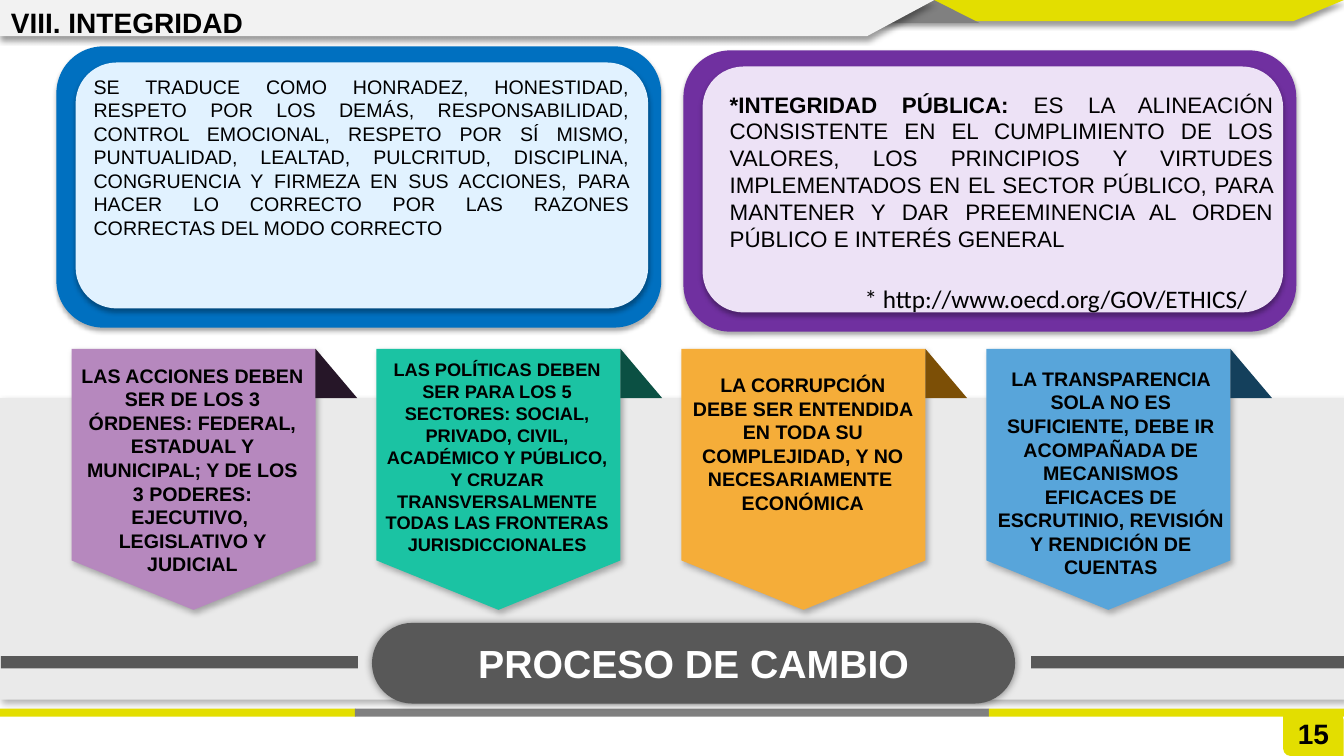
from dataclasses import dataclass
from typing import NamedTuple

from lxml.etree import SubElement
from pptx import Presentation
from pptx.dml.color import RGBColor
from pptx.enum.shapes import MSO_SHAPE
from pptx.enum.text import MSO_ANCHOR, MSO_AUTO_SIZE, PP_ALIGN
from pptx.oxml.ns import qn
from pptx.util import Emu, Inches, Pt

CELL = Inches(0.1)
COLUMNS, ROWS = 133.33, 75

COLORS = {
    "white": "FFFFFF", "black": "000000", "yellow": "E3DE00", "gray": "808080",
    "header": "F2F2F2", "band": "EAEAEA", "charcoal": "585858",
    "blue": "0070C0", "pale_blue": "E1F2FF", "purple": "7030A0", "pale_purple": "EDE2F6",
    "mauve": "B688BE", "dark_mauve": "261628", "teal": "1BC3A3", "dark_teal": "0B5043",
    "orange": "F5AD39", "dark_orange": "7C4F06", "sky": "58A5DA", "dark_sky": "14405C",
}


class Area(NamedTuple):
    col: float
    row: float
    cols: float
    rows: float


class Shadow(NamedTuple):
    opacity: int
    blur: float
    distance: float
    angle: int


@dataclass
class Panel:
    area: Area
    border: str
    fill: str


@dataclass
class Ribbon:
    message: str
    fill: str
    fold: str
    text_area: Area
    size: int = 14


HEADER_SHADOW = Shadow(40, 4, 3, 90)
RIBBON_SHADOW = Shadow(30, 4.5, 2.6, 53)
PANEL_SHADOW = Shadow(32, 3.5, 2.2, 90)
BUTTON_SHADOW = Shadow(40, 5, 0, 0)

RIBBON_LEFT, RIBBON_TOP, RIBBON_STEP = 7.1, 34.6, 30.25
RIBBON_COLS, RIBBON_ROWS, POINT_ROWS = 24.2, 25.9, 4.9
FOLD_COLS, FOLD_ROWS = 4.15, 4.9

PANELS = [
    Panel(Area(67.8, 5, 60.8, 27.9), "purple", "pale_purple"),
    Panel(Area(5.6, 4.6, 60, 27.9), "blue", "pale_blue"),
]

RIBBONS = [
    Ribbon("LAS ACCIONES DEBEN SER DE LOS 3 ÓRDENES: FEDERAL, ESTADUAL Y MUNICIPAL; "
           "Y DE LOS 3 PODERES: EJECUTIVO,  LEGISLATIVO Y JUDICIAL",
           "mauve", "dark_mauve", Area(7.1, 35.6, 24, 22.2)),
    Ribbon("LAS POLÍTICAS DEBEN SER PARA LOS 5 SECTORES: SOCIAL, PRIVADO, CIVIL, ACADÉMICO "
           "Y PÚBLICO, Y CRUZAR TRANSVERSALMENTE TODAS LAS FRONTERAS JURISDICCIONALES",
           "teal", "dark_teal", Area(37.2, 35.1, 24.2, 20.7), 13),
    Ribbon("LA CORRUPCIÓN DEBE SER ENTENDIDA EN TODA SU COMPLEJIDAD, "
           "Y NO NECESARIAMENTE  ECONÓMICA",
           "orange", "dark_orange", Area(67.6, 36.5, 24.1, 15.1)),
    Ribbon("LA TRANSPARENCIA SOLA NO ES SUFICIENTE, DEBE IR ACOMPAÑADA DE MECANISMOS "
           "EFICACES DE ESCRUTINIO, REVISIÓN Y RENDICIÓN DE CUENTAS",
           "sky", "dark_sky", Area(97.6, 35.9, 25.2, 22.2)),
]

INTEGRITY = ("SE TRADUCE COMO HONRADEZ, HONESTIDAD, RESPETO POR LOS DEMÁS, RESPONSABILIDAD, "
             "CONTROL EMOCIONAL, RESPETO POR SÍ MISMO, PUNTUALIDAD, LEALTAD, PULCRITUD, "
             "DISCIPLINA, CONGRUENCIA Y FIRMEZA EN SUS ACCIONES, PARA HACER LO CORRECTO "
             "POR LAS RAZONES CORRECTAS DEL MODO CORRECTO")
PUBLIC_INTEGRITY = (" ES LA ALINEACIÓN CONSISTENTE EN EL CUMPLIMIENTO DE LOS VALORES, LOS "
                    "PRINCIPIOS Y VIRTUDES IMPLEMENTADOS EN EL SECTOR PÚBLICO, PARA MANTENER "
                    "Y DAR PREEMINENCIA AL ORDEN PÚBLICO E INTERÉS GENERAL ")


def cells(count: float) -> Emu:
    return Emu(round(count * CELL))


def paint(shape, fill: str, shadow: Shadow | None = None) -> None:
    shape.fill.solid()
    shape.fill.fore_color.rgb = RGBColor.from_string(COLORS[fill])
    shape.line.fill.background()
    shape.shadow.inherit = False
    if shadow:
        effects = shape._element.spPr.find(qn("a:effectLst"))
        outer = SubElement(effects, qn("a:outerShdw"), blurRad=str(Pt(shadow.blur)),
                           dist=str(Pt(shadow.distance)), dir=str(shadow.angle * 60000),
                           algn="ctr", rotWithShape="0")
        tint = SubElement(outer, qn("a:srgbClr"), val=COLORS["black"])
        SubElement(tint, qn("a:alpha"), val=str(shadow.opacity * 1000))


def add_block(slide, area: Area, fill: str, kind=MSO_SHAPE.RECTANGLE,
              shadow: Shadow | None = None, corners: tuple[float, ...] = ()):
    block = slide.shapes.add_shape(kind, *map(cells, area))
    for index, corner in enumerate(corners):
        block.adjustments[index] = corner
    paint(block, fill, shadow)
    return block


def add_outline(slide, points: list[tuple[float, float]], fill: str,
                shadow: Shadow | None = None) -> None:
    start, *rest = [(cells(col), cells(row)) for col, row in points]
    builder = slide.shapes.build_freeform(*start)
    builder.add_line_segments(rest, close=True)
    paint(builder.convert_to_shape(), fill, shadow)


def write(frame, text: str, *, size: int, bold: bool = False, lead: str = "",
          font: str = "Arial", color: str = "black", align=PP_ALIGN.LEFT,
          anchor=MSO_ANCHOR.TOP) -> None:
    frame.word_wrap = True
    frame.auto_size = MSO_AUTO_SIZE.SHAPE_TO_FIT_TEXT
    frame.vertical_anchor = anchor
    paragraph = frame.paragraphs[0]
    paragraph.alignment = align
    for part, heavy in ((lead, True), (text, bold)):
        if part:
            run = paragraph.add_run()
            run.text = part
            run.font.name = font
            run.font.size = Pt(size)
            run.font.bold = heavy
            run.font.color.rgb = RGBColor.from_string(COLORS[color])


def add_text(slide, area: Area, text: str, **style) -> None:
    write(slide.shapes.add_textbox(*map(cells, area)).text_frame, text, **style)


def draw_frame(slide) -> None:
    add_outline(slide, [(63, 0), (COLUMNS, 0), (128.3, 2.1), (63, 2.1)], "yellow", HEADER_SHADOW)
    add_block(slide, Area(88.1, 0, 9.1, 2.3), "gray", MSO_SHAPE.ISOSCELES_TRIANGLE)
    add_outline(slide, [(0, 0), (92.7, 0), (86, 3.6), (0, 3.6)], "header", HEADER_SHADOW)
    add_block(slide, Area(127.3, 70.7, 6, 4.3), "yellow", MSO_SHAPE.ROUND_2_DIAG_RECTANGLE,
              corners=(0, 0.17))
    for col, cols, fill in ((0, 35.3, "yellow"), (35.2, 62.9, "gray"), (98.1, 35.23, "yellow")):
        add_block(slide, Area(col, 70.3, cols, 0.8), fill)
    add_text(slide, Area(127.3, 70.6, 6, 4.4), "15", size=20, bold=True, align=PP_ALIGN.CENTER)
    add_text(slide, Area(0.1, 0, 101.3, 4.4), "VIII. INTEGRIDAD", size=20, bold=True,
             anchor=MSO_ANCHOR.MIDDLE)


def draw_panel(slide, panel: Panel) -> None:
    col, row, cols, rows = panel.area
    inner = Area(col + 1.9, row + 1.6, cols - 3.2, rows - 3.5)
    for area, fill in ((panel.area, panel.border), (inner, panel.fill)):
        add_block(slide, area, fill, MSO_SHAPE.ROUNDED_RECTANGLE, PANEL_SHADOW)


def draw_ribbon(slide, ribbon: Ribbon, position: int) -> None:
    left = RIBBON_LEFT + position * RIBBON_STEP
    right, tip = left + RIBBON_COLS, RIBBON_TOP + RIBBON_ROWS
    shoulder, crease = tip - POINT_ROWS, RIBBON_TOP + FOLD_ROWS
    add_outline(slide, [(left, RIBBON_TOP), (right, RIBBON_TOP), (right, shoulder),
                        ((left + right) / 2, tip), (left, shoulder)], ribbon.fill, RIBBON_SHADOW)
    add_outline(slide, [(right, RIBBON_TOP), (right + FOLD_COLS, crease), (right, crease)],
                ribbon.fold)
    add_text(slide, ribbon.text_area, ribbon.message, size=ribbon.size, bold=True,
             align=PP_ALIGN.CENTER)


def main() -> None:
    deck = Presentation()
    deck.slide_width, deck.slide_height = cells(COLUMNS), cells(ROWS)
    slide = deck.slides.add_slide(deck.slide_layouts[6])

    draw_frame(slide)
    add_block(slide, Area(0, 39.5, COLUMNS, 29.9), "band", shadow=RIBBON_SHADOW)
    for position, ribbon in enumerate(RIBBONS):
        draw_ribbon(slide, ribbon, position)
    for panel in PANELS:
        draw_panel(slide, panel)

    add_text(slide, Area(71.4, 8.5, 55.9, 17.2), PUBLIC_INTEGRITY, size=16,
             lead="*INTEGRIDAD PÚBLICA:", align=PP_ALIGN.JUSTIFY)
    add_text(slide, Area(84.8, 27.6, 48.5, 4), "* http://www.oecd.org/GOV/ETHICS/", size=18,
             font="Calibri")
    add_text(slide, Area(8.3, 6.9, 55.1, 17.5), INTEGRITY, size=14, align=PP_ALIGN.JUSTIFY)

    process = add_block(slide, Area(36.9, 61.8, 63.8, 8), "charcoal",
                        MSO_SHAPE.ROUNDED_RECTANGLE, BUTTON_SHADOW, (0.5,))
    write(process.text_frame, "PROCESO DE CAMBIO", size=28, bold=True, color="white",
          align=PP_ALIGN.CENTER, anchor=MSO_ANCHOR.MIDDLE)
    for col, cols in ((0.1, 35.4), (102.3, 31.03)):
        add_block(slide, Area(col, 65.1, cols, 1.2), "charcoal")

    deck.save("out.pptx")


if __name__ == "__main__":
    main()
